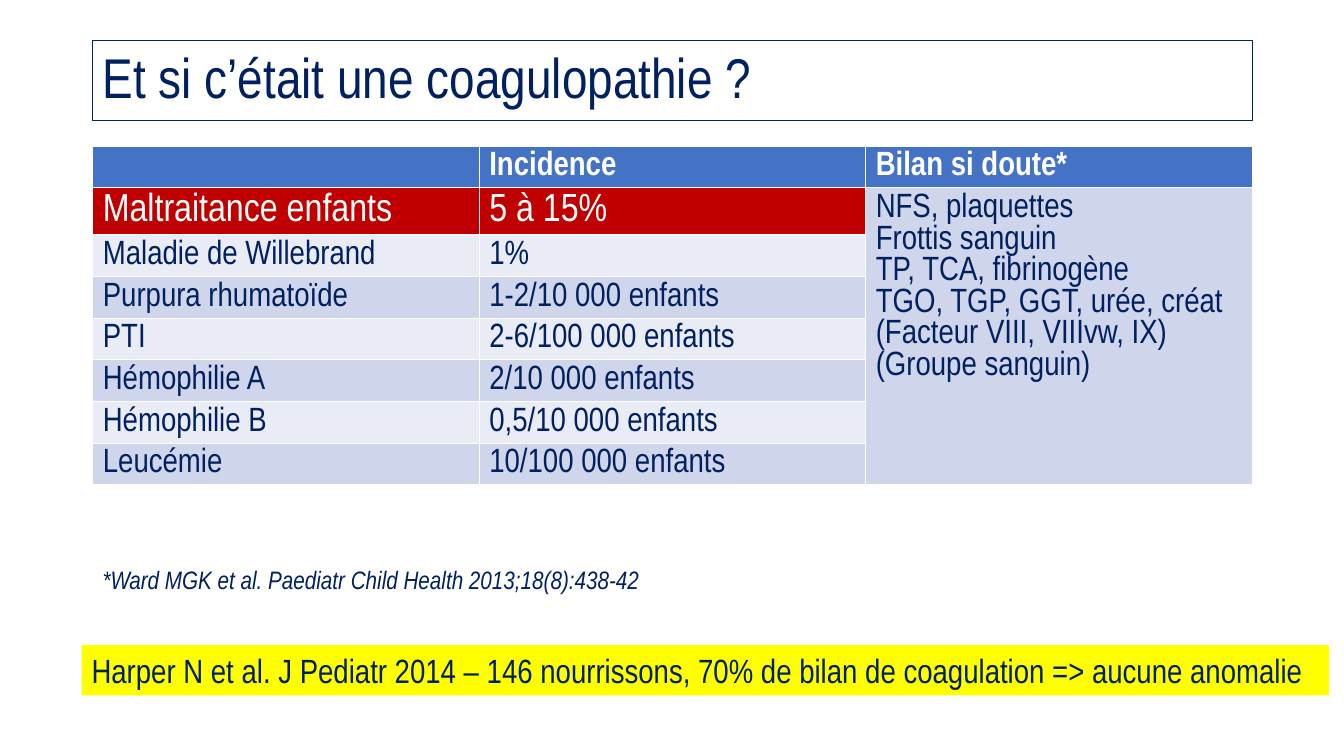
from pptx import Presentation
from pptx.dml.color import RGBColor
from pptx.enum.shapes import MSO_SHAPE
from pptx.enum.text import MSO_ANCHOR, MSO_AUTO_SIZE, PP_ALIGN
from pptx.util import Inches, Pt

RECTANGLE = MSO_SHAPE.RECTANGLE
MIDDLE, TOP = MSO_ANCHOR.MIDDLE, MSO_ANCHOR.TOP
GROW = MSO_AUTO_SIZE.SHAPE_TO_FIT_TEXT
LEFT = PP_ALIGN.LEFT

TITLE = "Et si c’était une coagulopathie ?"
HEADERS = ["", "Incidence", "Bilan si doute*"]
CAUSES = [
    ("Maltraitance enfants", "5 à 15%"),
    ("Maladie de Willebrand", "1%"),
    ("Purpura rhumatoïde", "1-2/10 000 enfants"),
    ("PTI", "2-6/100 000 enfants"),
    ("Hémophilie A", "2/10 000 enfants"),
    ("Hémophilie B", "0,5/10 000 enfants"),
    ("Leucémie", "10/100 000 enfants"),
]
TESTS = [
    "NFS, plaquettes",
    "Frottis sanguin",
    "TP, TCA, fibrinogène",
    "TGO, TGP, GGT, urée, créat",
    "(Facteur VIII, VIIIvw, IX)",
    "(Groupe sanguin)",
]
REFERENCE = "*Ward MGK et al. Paediatr Child Health 2013;18(8):438-42"
STUDY = ("Harper N et al. J Pediatr 2014 – 146 nourrissons, "
         "70% de bilan de coagulation => aucune anomalie")

FONT = "Arial Narrow"
NAVY = RGBColor(0x00, 0x20, 0x60)
WHITE = RGBColor(0xFF, 0xFF, 0xFF)
BLUE = RGBColor(0x44, 0x72, 0xC4)
RED = RGBColor(0xC0, 0x00, 0x00)
YELLOW = RGBColor(0xFF, 0xFF, 0x00)
BANDS = [RGBColor(0xCF, 0xD5, 0xEA), RGBColor(0xE9, 0xEB, 0xF5)]

MARGIN, CONTENT_WIDTH, ROW_HEIGHT = 0.92, 11.5, 0.41


def write(frame, lines, size=24, color=NAVY, bold=False, italic=False, spacing=None):
    for index, line in enumerate(lines):
        paragraph = frame.add_paragraph() if index else frame.paragraphs[0]
        paragraph.alignment = LEFT
        paragraph.line_spacing = spacing
        run = paragraph.add_run()
        run.text = line
        font = run.font
        font.name, font.size, font.color.rgb = FONT, Pt(size), color
        font.bold, font.italic = bold, italic


def box(left, top, width, height):
    return [Inches(length) for length in (left, top, width, height)]


def fill_cell(cell, lines, fill, **text_format):
    cell.fill.solid()
    cell.fill.fore_color.rgb = fill
    if any(lines):
        write(cell.text_frame, lines, **text_format)


def add_title(slide):
    title = slide.shapes.title
    title.left, title.top, title.width, title.height = box(MARGIN, 0.4, CONTENT_WIDTH, 0.8)
    title.line.color.rgb = NAVY
    title.line.width = Pt(0.75)
    title.text_frame.vertical_anchor = MIDDLE
    write(title.text_frame, [TITLE], size=40, spacing=0.9)


def add_causes_table(slide):
    row_count = len(CAUSES) + 1
    area = box(MARGIN, 1.45, CONTENT_WIDTH, ROW_HEIGHT * row_count)
    table = slide.shapes.add_table(row_count, len(HEADERS), *area).table
    for column, header in enumerate(HEADERS):
        fill_cell(table.cell(0, column), [header], BLUE, color=WHITE, bold=True)
    for row, cause in enumerate(CAUSES, start=1):
        highlighted = row == 1
        fill = RED if highlighted else BANDS[(row - 1) % 2]
        size, color = (28, WHITE) if highlighted else (24, NAVY)
        for column, text in enumerate(cause):
            fill_cell(table.cell(row, column), [text], fill, size=size, color=color)
    tests_cell = table.cell(1, 2)
    tests_cell.merge(table.cell(row_count - 1, 2))
    fill_cell(tests_cell, TESTS, BANDS[0])


def add_note(shape, text, anchor, **text_format):
    frame = shape.text_frame
    frame.word_wrap = False
    frame.auto_size = GROW
    frame.vertical_anchor = anchor
    write(frame, [text], **text_format)


def main():
    presentation = Presentation()
    presentation.slide_width, presentation.slide_height = Inches(13.33), Inches(7.5)
    slide = presentation.slides.add_slide(presentation.slide_layouts[5])
    add_title(slide)
    add_causes_table(slide)

    reference = slide.shapes.add_textbox(*box(MARGIN, 5.55, 5.59, 0.4))
    add_note(reference, REFERENCE, TOP, size=18, italic=True)

    study = slide.shapes.add_shape(RECTANGLE, *box(0.81, 6.4, 12.37, 0.5))
    study.shadow.inherit = False
    study.fill.solid()
    study.fill.fore_color.rgb = YELLOW
    study.line.fill.background()
    add_note(study, STUDY, TOP)

    presentation.save("out.pptx")


if __name__ == "__main__":
    main()
